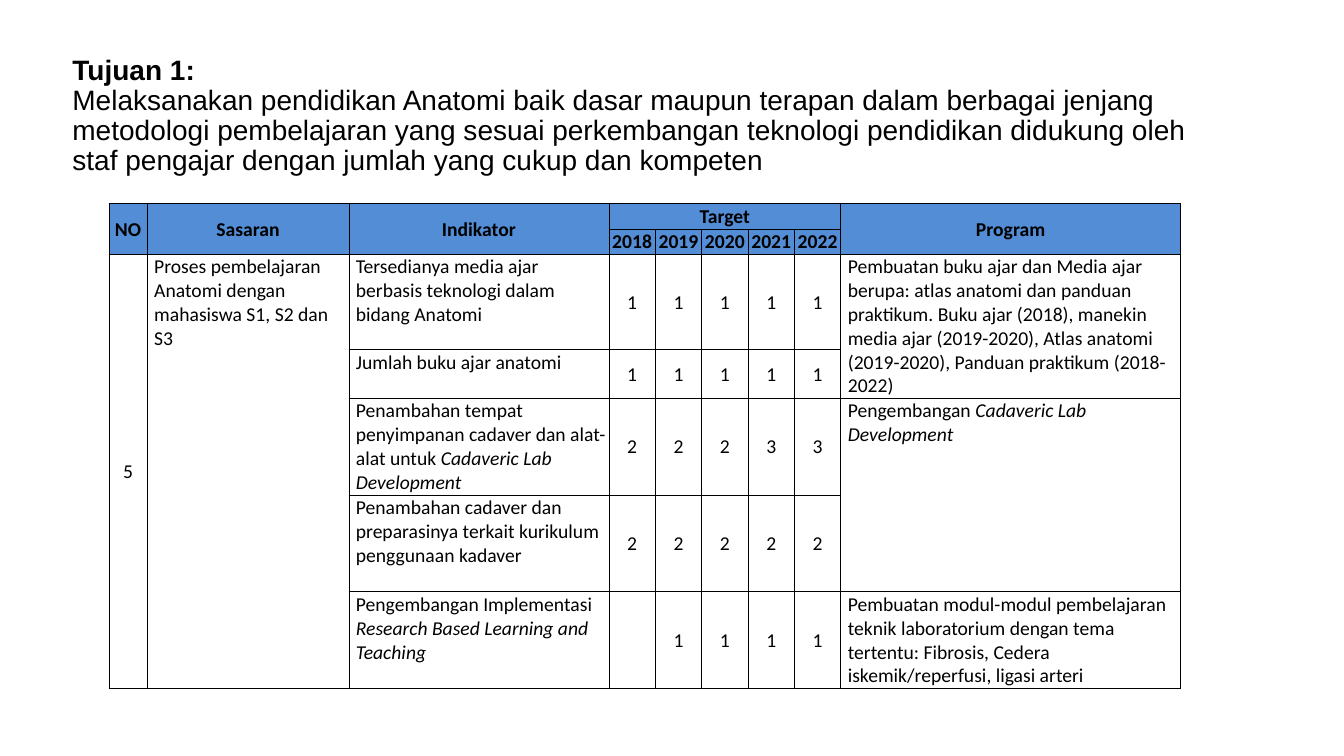
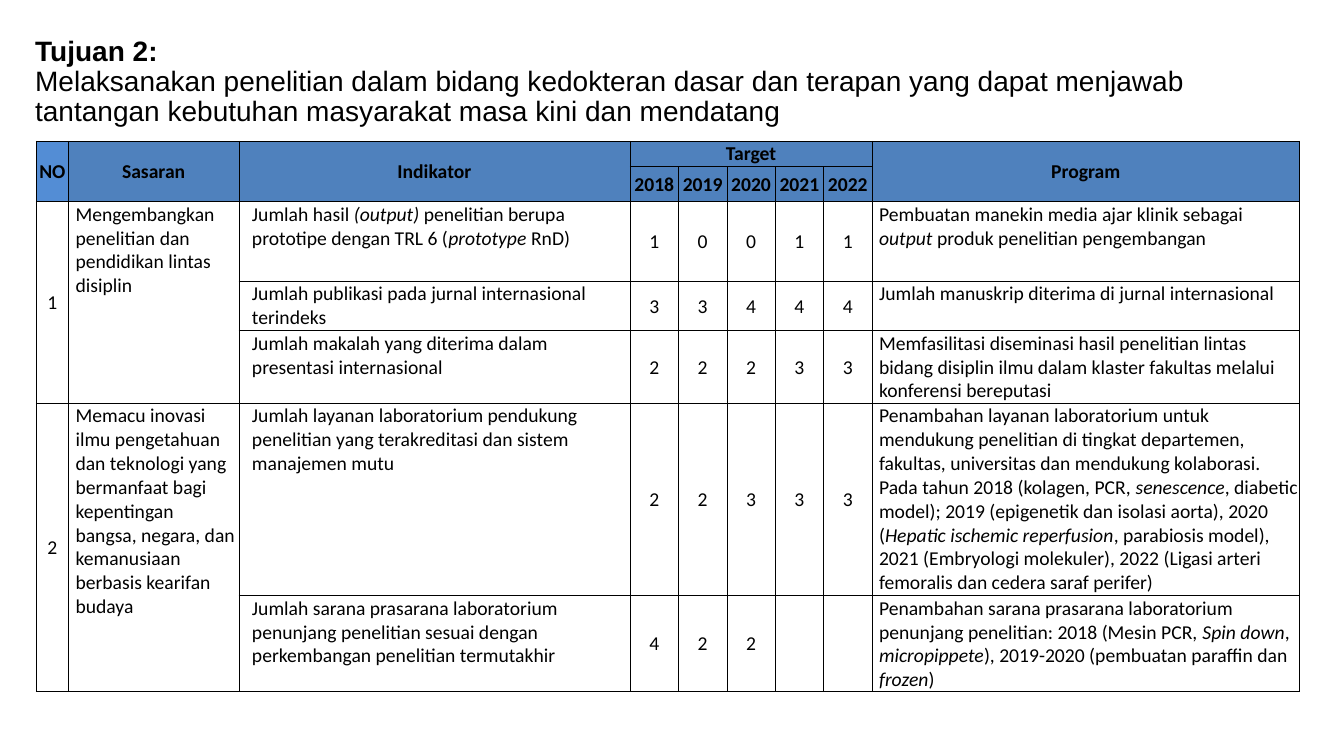
import pptx
import pptx.dml.color
import pptx.enum.text
import pptx.oxml
import pptx.oxml.ns
import pptx.util

Inches = pptx.util.Inches
Pt = pptx.util.Pt
MIDDLE = pptx.enum.text.MSO_ANCHOR.MIDDLE
TOP = pptx.enum.text.MSO_ANCHOR.TOP
CENTER = pptx.enum.text.PP_ALIGN.CENTER

# Shared look
COLORS = {"text": "000000", "border": "000000", "cell": "FFFFFF",
          "header": "538DD5", "header_dark": "4F81BD"}
TITLE_FONT, TABLE_FONT = "Arial", "Calibri"
BORDER_WIDTH = Pt(0.5)
CELL_INSET = Inches(0.01)
TEXT_INDENT = 0.06
YEARS = ["2018", "2019", "2020", "2021", "2022"]
NO, SASARAN, INDIKATOR, TARGET, PROGRAM = 0, 1, 2, 3, 8
HEADER_ROWS = [["NO", "Sasaran", "Indikator", "Target"] + [None] * 4 + ["Program"],
               [None] * 3 + YEARS + [None]]

# Content: number, goal, indicator, yearly targets, program.
# None continues the cell above; asterisks enclose italics.
TUJUAN_1 = [
    ("5", "Proses pembelajaran Anatomi dengan mahasiswa S1, S2 dan S3",
     "Tersedianya media ajar berbasis teknologi dalam bidang Anatomi",
     [1, 1, 1, 1, 1],
     "Pembuatan buku ajar dan Media ajar berupa: atlas anatomi dan panduan "
     "praktikum. Buku ajar (2018), manekin media ajar (2019-2020), Atlas anatomi "
     "(2019-2020), Panduan praktikum (2018-2022)"),
    (None, None, "Jumlah buku ajar anatomi", [1, 1, 1, 1, 1], None),
    (None, None,
     "Penambahan tempat penyimpanan cadaver dan alat-alat untuk "
     "*Cadaveric Lab Development*",
     [2, 2, 2, 3, 3], "Pengembangan *Cadaveric Lab Development*"),
    (None, None,
     "Penambahan cadaver dan preparasinya terkait kurikulum penggunaan kadaver",
     [2, 2, 2, 2, 2], None),
    (None, None,
     "Pengembangan Implementasi *Research Based Learning and Teaching*",
     ["", 1, 1, 1, 1],
     "Pembuatan modul-modul pembelajaran teknik laboratorium dengan tema "
     "tertentu: Fibrosis, Cedera iskemik/reperfusi, ligasi arteri"),
]
TUJUAN_2 = [
    ("1", "Mengembangkan penelitian dan pendidikan lintas disiplin",
     "Jumlah hasil *(output)* penelitian berupa prototipe dengan TRL 6 "
     "(*prototype* RnD)",
     [1, 0, 0, 1, 1],
     "Pembuatan manekin media ajar klinik sebagai *output* produk penelitian "
     "pengembangan"),
    (None, None, "Jumlah publikasi pada jurnal internasional terindeks",
     [3, 3, 4, 4, 4], "Jumlah manuskrip diterima di jurnal internasional"),
    (None, None, "Jumlah makalah yang diterima dalam presentasi internasional",
     [2, 2, 2, 3, 3],
     "Memfasilitasi diseminasi hasil penelitian lintas bidang disiplin ilmu dalam "
     "klaster fakultas melalui konferensi bereputasi"),
    ("2", "Memacu inovasi ilmu pengetahuan dan teknologi yang bermanfaat bagi "
     "kepentingan bangsa, negara, dan kemanusiaan berbasis kearifan budaya",
     "Jumlah layanan laboratorium pendukung penelitian yang terakreditasi dan "
     "sistem manajemen mutu",
     [2, 2, 3, 3, 3],
     "Penambahan layanan laboratorium untuk mendukung penelitian di tingkat "
     "departemen, fakultas, universitas dan mendukung kolaborasi. Pada tahun 2018 "
     "(kolagen, PCR, *senescence*, diabetic model); 2019 (epigenetik dan isolasi "
     "aorta), 2020 (*Hepatic ischemic reperfusion*, parabiosis model), 2021 "
     "(Embryologi molekuler), 2022 (Ligasi arteri femoralis dan cedera saraf "
     "perifer)"),
    (None, None,
     "Jumlah sarana prasarana laboratorium penunjang penelitian sesuai dengan "
     "perkembangan penelitian termutakhir",
     [4, 2, 2, "", ""],
     "Penambahan sarana prasarana laboratorium penunjang penelitian: 2018 (Mesin "
     "PCR, *Spin down*, *micropippete*), 2019-2020 (pembuatan paraffin dan "
     "*frozen*)"),
]


def rgb(name):
    return pptx.dml.color.RGBColor.from_string(COLORS[name])


def set_font(paragraph, name, size, bold=None):
    paragraph.font.name = name
    paragraph.font.size = Pt(size)
    paragraph.font.bold = bold
    paragraph.font.color.rgb = rgb("text")


def add_title(slide, box, heading, statement):
    frame = slide.shapes.add_textbox(*map(Inches, box)).text_frame
    frame.word_wrap = True
    frame.vertical_anchor = MIDDLE
    paragraph = frame.paragraphs[0]
    paragraph.line_spacing = 0.9
    set_font(paragraph, TITLE_FONT, 20)
    label = paragraph.add_run()
    label.text = heading
    label.font.bold = True
    paragraph.add_line_break()
    paragraph.add_run().text = statement


def set_borders(cell):
    properties = cell._tc.get_or_add_tcPr()
    for position, side in enumerate(("lnL", "lnR", "lnT", "lnB")):
        properties.insert(position, pptx.oxml.parse_xml(
            f'<a:{side} {pptx.oxml.ns.nsdecls("a")} w="{BORDER_WIDTH}"><a:solidFill>'
            f'<a:srgbClr val="{COLORS["border"]}"/></a:solidFill></a:{side}>'))


def write_cell(cell, text, fill, bold=False, indent=None):
    """Centre the text, or set it at the top left if an indent is given."""
    cell.margin_left = cell.margin_top = cell.margin_right = CELL_INSET
    cell.margin_bottom = 0
    if fill:
        cell.fill.solid()
        cell.fill.fore_color.rgb = rgb(fill)
    else:
        cell.fill.background()
    set_borders(cell)
    paragraph = cell.text_frame.paragraphs[0]
    if indent is None:
        cell.vertical_anchor = MIDDLE
        paragraph.alignment = CENTER
    else:
        cell.vertical_anchor = TOP
        paragraph._p.get_or_add_pPr().set("marL", str(Inches(indent)))
    set_font(paragraph, TABLE_FONT, 14, bold)
    for index, part in enumerate((text or "").split("*")):
        if part:
            run = paragraph.add_run()
            run.text = part
            if index % 2:
                run.font.italic = True


def merge_down(table, rows, column):
    starts = [r for r, row in enumerate(rows) if row[column] is not None]
    for start, end in zip(starts, starts[1:] + [len(rows)]):
        if end - start > 1:
            table.cell(start, column).merge(table.cell(end - 1, column))


def add_target_table(slide, corner, widths, heights, goals, header_fill,
                     indicator_indent=TEXT_INDENT):
    rows = HEADER_ROWS + [[no, goal, indicator, *map(str, targets), program]
                          for no, goal, indicator, targets, program in goals]
    table = slide.shapes.add_table(
        len(rows), len(widths), *map(Inches, (*corner, sum(widths), sum(heights)))).table
    table.first_row = table.horz_banding = False
    for column, width in zip(table.columns, widths):
        column.width = Inches(width)
    for row, height in zip(table.rows, heights):
        row.height = Inches(height)

    # Merged areas
    table.cell(0, TARGET).merge(table.cell(0, PROGRAM - 1))
    for column in (NO, SASARAN, INDIKATOR, PROGRAM):
        merge_down(table, rows, column)

    # Cell texts
    indents = {SASARAN: TEXT_INDENT, INDIKATOR: indicator_indent, PROGRAM: TEXT_INDENT}
    for r, row in enumerate(rows):
        for c, text in enumerate(row):
            cell = table.cell(r, c)
            if r < len(HEADER_ROWS):
                write_cell(cell, text, "header" if c == NO else header_fill, bold=True)
            else:
                write_cell(cell, text, None if c == NO else "cell", indent=indents.get(c))


def main():
    deck = pptx.Presentation()
    deck.slide_width, deck.slide_height = Inches(13.33), Inches(7.5)
    blank = deck.slide_layouts[6]

    # Goal 1: education
    education = deck.slides.add_slide(blank)
    add_target_table(education, (1.08, 2.02), [0.38, 2, 2.58] + [0.46] * 5 + [3.37],
                     [0.25, 0.25, 0.95, 0.48, 0.96, 0.96, 0.96], TUJUAN_1, "header")
    add_title(education, (0.62, 0.43, 11.5, 1.45), "Tujuan 1:",
              "Melaksanakan pendidikan Anatomi baik dasar maupun terapan dalam "
              "berbagai jenjang metodologi pembelajaran yang sesuai perkembangan "
              "teknologi pendidikan didukung oleh staf pengajar dengan jumlah yang "
              "cukup dan kompeten")

    # Goal 2: research
    research = deck.slides.add_slide(blank)
    add_title(research, (0.25, 0.09, 11.91, 1.45), "Tujuan 2:",
              "Melaksanakan penelitian dalam bidang kedokteran dasar dan terapan yang "
              "dapat menjawab tantangan kebutuhan masyarakat masa kini dan mendatang")
    add_target_table(research, (0.36, 1.4), [0.32, 1.69, 3.88] + [0.48] * 5 + [4.24],
                     [0.25, 0.35, 0.79, 0.49, 0.72, 1.91, 0.95], TUJUAN_2,
                     "header_dark", indicator_indent=0.12)

    deck.save("out.pptx")


if __name__ == "__main__":
    main()
